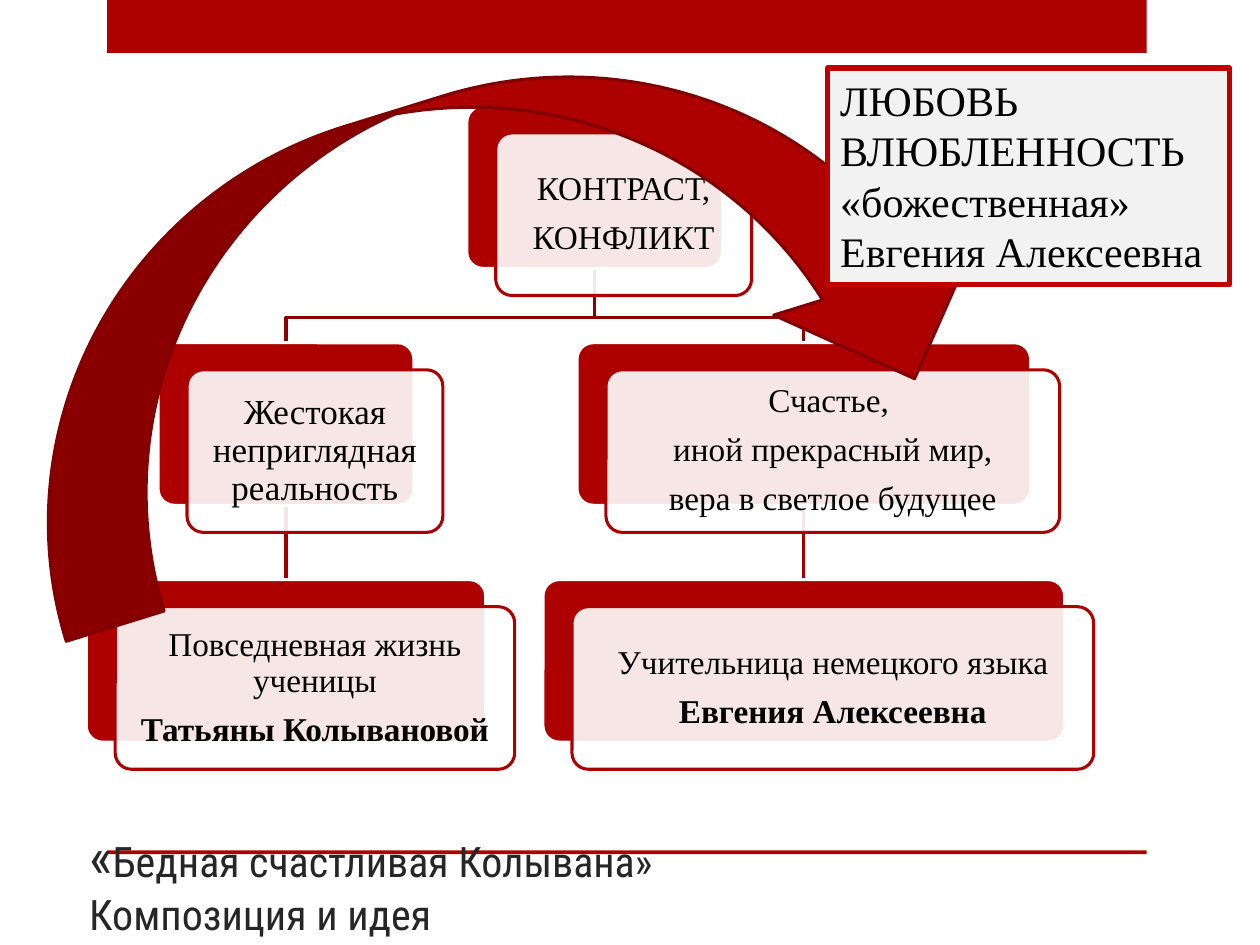
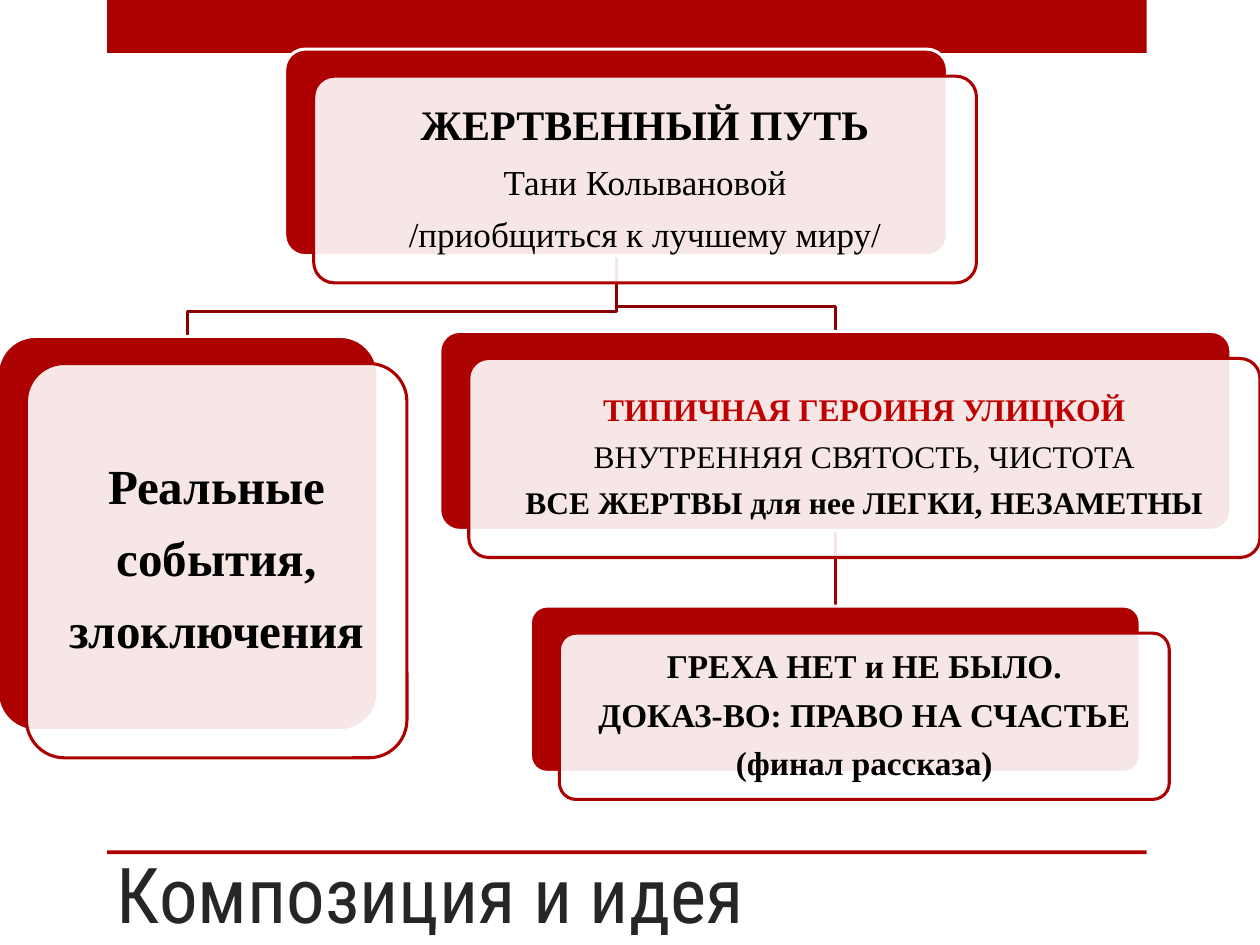
"""Builds two slides of red card trees on the plot and idea of a story."""
from collections import namedtuple

from lxml.etree import SubElement as Sub
from pptx import Presentation
from pptx.dml.color import RGBColor as Rgb
from pptx.enum.shapes import MSO_CONNECTOR as Link, MSO_SHAPE as Kind
from pptx.enum.text import MSO_ANCHOR as Anchor, PP_ALIGN as Align
from pptx.oxml.ns import qn
from pptx.util import Inches, Pt


class Theme:
    red, white, black, ink = "AD0101", "FFFFFF", "000000", "262626"
    accent, pale, edge = "C00000", "F2F2F2", "800101"
    fork, stem = "8B0101", "9D0101"
    head, body = "Roboto Condensed", "Times New Roman"
    thin, thick = 1.75, 3
    note = 24
    lead, gap = 0.9, 0.39
    veil = 90


Line = namedtuple("Line", "text bold size color", defaults=(False, None, Theme.black))
Card = namedtuple("Card", "mid top wide high size pad lines")

SHIFT_X, SHIFT_Y = 0.23, 0.215
BEND = 0.2
BANDS = [(0.85, 0, 8.25, 0.42), (0.85, 6.75, 8.25, 0.03)]
ROWS = [0.84 + 1.88 * row for row in range(3)]
HIGH = 1.29
LEFT, RIGHT = 2.27, 6.38

PLOT = {
    "title": (0.61, [("«", 32), ("Бедная счастливая Колывана»\vКомпозиция и идея", 24)]),
    "cards": {
        "clash": Card(4.72, ROWS[0], 2.03, HIGH, 19, 0.08,
                      [Line("КОНТРАСТ,"), Line("КОНФЛИКТ")]),
        "real": Card(LEFT, ROWS[1], 2.03, HIGH, 20, 0.08,
                     [Line("Жестокая неприглядная реальность")]),
        "pupil": Card(LEFT, ROWS[2], 3.17, HIGH, 19, 0.08,
                      [Line("Повседневная жизнь ученицы"),
                       Line("Татьяны Колывановой", True)]),
        "joy": Card(RIGHT, ROWS[1], 3.6, HIGH, 19, 0.08,
                    [Line("Счастье, "), Line("иной прекрасный мир,"),
                     Line("вера в светлое будущее")]),
        "tutor": Card(RIGHT, ROWS[2], 4.14, HIGH, 19, 0.08,
                      [Line("Учительница немецкого языка"),
                       Line("Евгения Алексеевна", True)]),
    },
    "links": [("joy", "tutor"), ("clash", "joy"), ("real", "pupil"), ("clash", "real")],
}

IDEA = {
    "title": (0.83, [("Композиция и идея", 44)]),
    "cards": {
        "path": Card(4.89, 0.39, 5.26, 1.64, 20, 0.1,
                     [Line("ЖЕРТВЕННЫЙ ПУТЬ", True, 24), Line("Тани Колывановой"),
                      Line("/приобщиться к лучшему миру/")]),
        "events": Card(1.49, 2.67, 3.02, 3.13, 28, 0.12,
                       [Line("Реальные", True), Line("события,", True),
                        Line("злоключения", True)]),
        "type": Card(6.63, 2.63, 6.28, 1.58, 18, 0.07,
                     [Line("ТИПИЧНАЯ ГЕРОИНЯ УЛИЦКОЙ", True, color=Theme.accent),
                      Line("ВНУТРЕННЯЯ СВЯТОСТЬ, ЧИСТОТА"),
                      Line("ВСЕ ЖЕРТВЫ для нее ЛЕГКИ, НЕЗАМЕТНЫ", True)]),
        "proof": Card(6.63, 4.81, 4.84, 1.32, 19, 0.08,
                      [Line("ГРЕХА НЕТ и НЕ БЫЛО.", True),
                       Line("ДОКАЗ-ВО: ПРАВО НА СЧАСТЬЕ", True),
                       Line("(финал рассказа)", True)]),
    },
    "links": [("type", "proof"), ("path", "type"), ("path", "events")],
}

ARROW, TURN = (-0.13, 0.75, 7.86, 3.25), 342.8
NOTE = (6.57, 0.54, 3.19, 1.72)
LOVE = ["ЛЮБОВЬ", "ВЛЮБЛЕННОСТЬ", "«божественная»", "Евгения Алексеевна"]


def box(at):
    return [Inches(side) for side in at]


def tint(fill, color):
    fill.solid()
    fill.fore_color.rgb = Rgb.from_string(color)


def rule(line, color, width=Theme.thin):
    tint(line.fill, color)
    line.width = Pt(width)


def style(font, face, size, color, bold=False):
    font.name, font.size, font.bold = face, Pt(size), bold
    font.color.rgb = Rgb.from_string(color)


def draw(slide, kind, at, fill, line=None):
    shape = slide.shapes.add_shape(kind, *box(at))
    shape.shadow.inherit = False
    tint(shape.fill, fill)
    if line:
        rule(shape.line, line)
    else:
        shape.line.fill.background()
    return shape


def write(frame, lines, size):
    for spot, line in enumerate(lines):
        par = frame.add_paragraph() if spot else frame.paragraphs[0]
        par.text = line.text
        style(par.font, Theme.body, line.size or size, line.color, line.bold)
        yield par


def join(slide, top, end):
    low = top.top + top.high
    if top.mid == end.mid:
        wire = slide.shapes.add_connector(
            Link.STRAIGHT, *box((top.mid, low, end.mid, end.top)))
        Sub(wire._element.spPr, qn("a:effectLst"))
        rule(wire.line, Theme.stem)
        return
    turn = end.top - BEND
    pen = slide.shapes.build_freeform(*box((top.mid, low)))
    spots = [(top.mid, turn), (end.mid, turn), (end.mid, end.top)]
    pen.add_line_segments([box(spot) for spot in spots], close=False)
    wire = pen.convert_to_shape()
    wire.shadow.inherit = False
    wire.fill.background()
    rule(wire.line, Theme.fork)


def place(slide, card):
    left = card.mid - card.wide / 2
    size = (card.wide, card.high)
    back = draw(slide, Kind.ROUNDED_RECTANGLE, (left, card.top, *size),
                Theme.red, Theme.white)
    front = draw(slide, Kind.ROUNDED_RECTANGLE,
                 (left + SHIFT_X, card.top + SHIFT_Y, *size), Theme.white, Theme.red)
    for shape in (back, front):
        shape.adjustments[0] = 0.1
    hue = front._element.spPr.find(qn("a:solidFill"))[0]
    Sub(hue, qn("a:alpha"), val=str(Theme.veil * 1000))
    frame = front.text_frame
    frame.word_wrap, frame.vertical_anchor = True, Anchor.MIDDLE
    frame.margin_left = frame.margin_right = Inches(card.pad)
    frame.margin_top = frame.margin_bottom = Inches(card.pad)
    for par in write(frame, card.lines, card.size):
        par.alignment, par.line_spacing = Align.CENTER, Theme.lead
        par.space_after = Pt(par.font.size.pt * Theme.gap)


def label(slide, left, parts):
    frame = slide.shapes.add_textbox(*box((left, 5.75, 7.42, 1.75))).text_frame
    frame.word_wrap, frame.vertical_anchor = True, Anchor.BOTTOM
    par = frame.paragraphs[0]
    for text, size in parts:
        for spot, piece in enumerate(text.split("\v")):
            if spot:
                par.add_line_break()
            run = par.add_run()
            run.text = piece
            style(run.font, Theme.head, size, Theme.ink)


def build(deck, page):
    slide = deck.slides.add_slide(deck.slide_layouts[6])
    for band in BANDS:
        draw(slide, Kind.RECTANGLE, band, Theme.red)
    label(slide, *page["title"])
    cards = page["cards"]
    for top, end in page["links"]:
        join(slide, cards[top], cards[end])
    for card in cards.values():
        place(slide, card)
    return slide


def crown(slide):
    arrow = draw(slide, Kind.CURVED_DOWN_ARROW, ARROW, Theme.red, Theme.edge)
    arrow.rotation = TURN
    note = slide.shapes.add_textbox(*box(NOTE))
    tint(note.fill, Theme.pale)
    rule(note.line, Theme.accent, Theme.thick)
    note.text_frame.word_wrap = True
    list(write(note.text_frame, [Line(text) for text in LOVE], Theme.note))


def main():
    deck = Presentation()
    deck.slide_width, deck.slide_height = Inches(10), Inches(7.5)
    crown(build(deck, PLOT))
    build(deck, IDEA)
    deck.save("out.pptx")


if __name__ == "__main__":
    main()
